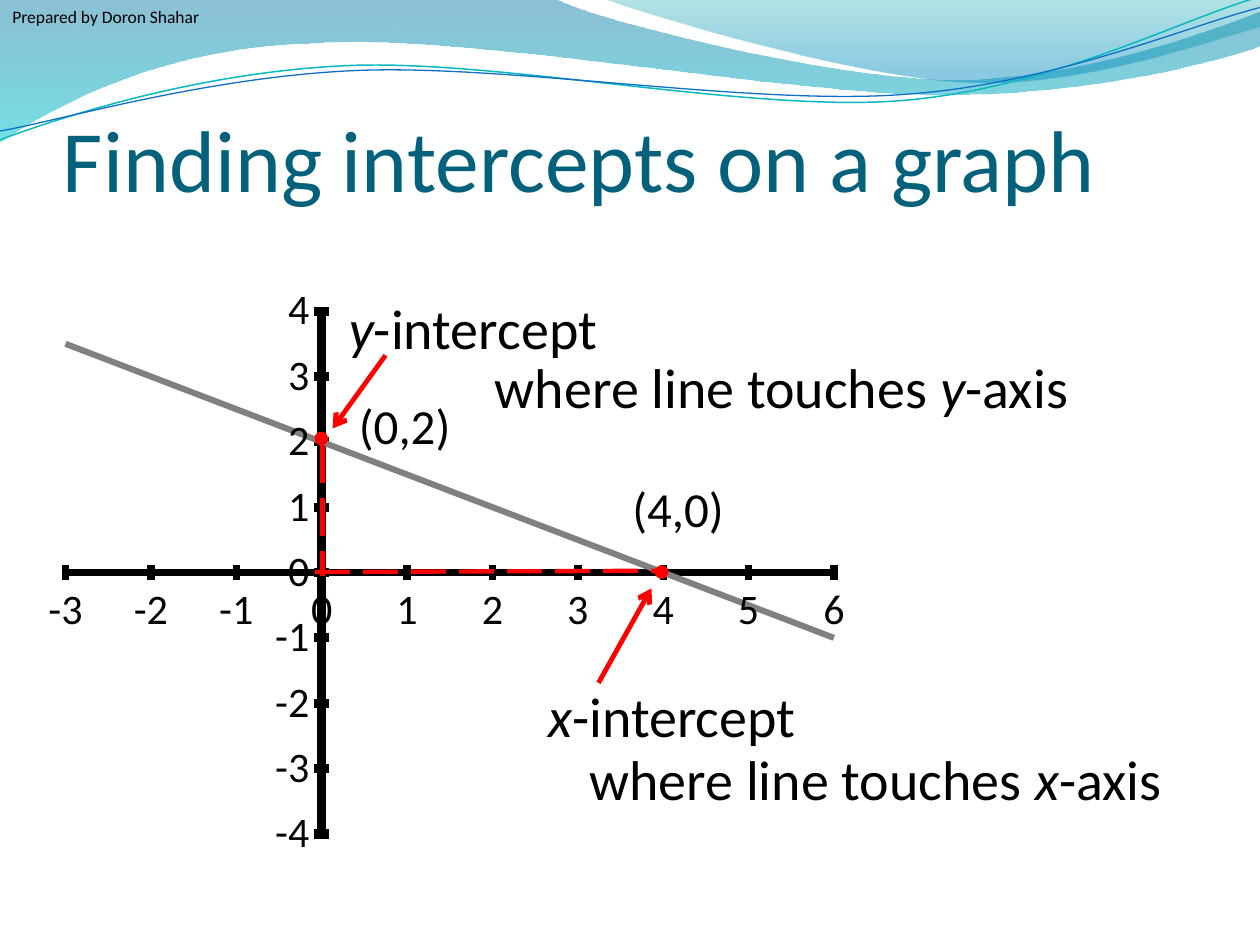
import math

from lxml import etree
from pptx import Presentation
from pptx.chart import data
from pptx.dml import color
from pptx.enum import chart as ec, dml, shapes, text
from pptx.oxml import ns, parse_xml
from pptx.util import Inches, Pt

FONT = "Calibri"
RED = "FF0000"
BLACK = "000000"


def rgb(code):
    return color.RGBColor.from_string(code)


def sub(node, tag, **attrs):
    return etree.SubElement(node, ns.qn(tag), attrs)


def pen(line, code, width):
    line.color.rgb = rgb(code)
    line.width = Pt(width)


# Waves: each segment is a cubic curve (three points) or a line (one point)
def outline(group, start, segs, close):
    form = group.build_freeform(*map(Inches, start))
    form.add_line_segments(
        [tuple(map(Inches, pt)) for seg in segs for pt in seg], close=close)
    shape = form.convert_to_shape()
    shape.shadow.inherit = False
    steps = iter(shape._element.findall(".//" + ns.qn("a:lnTo")))
    for seg in segs:
        nodes = [next(steps) for pt in seg]
        if len(nodes) == 3:
            cubic = etree.Element(ns.qn("a:cubicBezTo"))
            nodes[0].addprevious(cubic)
            for node in nodes:
                cubic.append(node[0])
                node.getparent().remove(node)
    return shape


def band(group, start, segs, stops):
    shape = outline(group, start, segs, True)
    shape.line.fill.background()
    shape.fill.gradient()
    shape.fill.gradient_angle = 270
    for stop, (pos, code, alpha) in zip(shape.fill.gradient_stops, stops):
        stop.position = pos
        stop.color.rgb = rgb(code)
    clrs = shape._element.spPr.findall(".//" + ns.qn("a:srgbClr"))
    for clr, (pos, code, alpha) in zip(clrs, stops):
        sub(clr, "a:alpha", val=str(alpha * 1000))


def curve(group, mid, start, segs, code, width, tilt=-2.7):
    cos, sin = math.cos(math.radians(tilt)), math.sin(math.radians(tilt))

    def level(pt):
        dx, dy = pt[0] - mid[0], pt[1] - mid[1]
        return mid[0] + dx * cos + dy * sin, mid[1] - dx * sin + dy * cos

    shape = outline(group, level(start),
                    [[level(pt) for pt in seg] for seg in segs], False)
    shape.rotation = tilt
    shape.fill.background()
    pen(shape.line, code, width)


def waves(slide):
    band(slide.shapes, (0, 0), [
        [(4.4, -0.01)],
        [(4.76, 0.17), (6.64, 0.63), (7.58, 0.63)],
        [(8.53, 0.63), (9.58, 0.26), (10, 0.09)],
        [(10.01, 0.36)],
        [(9.83, 0.44), (8.7, 0.76), (7.46, 0.75)],
        [(6.22, 0.75), (3.82, 0.28), (2.57, 0.34)],
        [(1.29, 0.36), (0.46, 0.83), (-0.01, 1.13)],
    ], [(0, "0074A1", 45), (1, "00C6CF", 55)])
    band(slide.shapes, (4.79, -0.01), [
        [(5.09, 0.11), (6.82, 0.62), (7.69, 0.65)],
        [(8.56, 0.69), (9.61, 0.32), (10, 0.21)],
        [(10, 0)],
    ], [(0, "00A1A9", 30), (0.8, "008BBF", 45)])
    pair = slide.shapes.add_group_shape().shapes
    curve(pair, (4.99, 0.58), (0, 1.11), [
        [(0.48, 0.93), (1.58, 0.57), (2.77, 0.52)],
        [(3.95, 0.47), (5.93, 0.89), (7.13, 0.8)],
        [(8.33, 0.71), (9.38, 0.15), (9.98, -0.02)],
    ], "0AB8BF", 0.85)
    curve(pair, (5, 0.59), (0, 1.04), [
        [(0.47, 0.96), (1.64, 0.61), (2.83, 0.56)],
        [(4.03, 0.51), (5.97, 0.84), (7.17, 0.75)],
        [(8.36, 0.67), (9.41, 0.21), (10, 0.06)],
    ], "0F6FC6", 0.75)


# Text: parts between asterisks are italic
def label(slide, box, words, size, code=BLACK):
    frame = slide.shapes.add_textbox(*map(Inches, box)).text_frame
    frame.word_wrap = True
    frame.auto_size = text.MSO_AUTO_SIZE.SHAPE_TO_FIT_TEXT
    para = frame.paragraphs[0]
    para.font.name = FONT
    para.font.size = Pt(size)
    para.font.color.rgb = rgb(code)
    for i, part in enumerate(words.split("*")):
        if part:
            run = para.add_run()
            run.text = part
            if i % 2:
                run.font.italic = True
    return frame


def title(slide, box, words):
    frame = label(slide, box, words, 50, "04617B")
    frame.auto_size = text.MSO_AUTO_SIZE.NONE
    frame.margin_left = frame.margin_right = frame.margin_bottom = 0
    frame.vertical_anchor = text.MSO_ANCHOR.BOTTOM


# Line graph: three points and a trend line drawn across the whole axis
def axis(ax, low, high, width):
    ax.minimum_scale, ax.maximum_scale, ax.major_unit = low, high, 1
    ax.has_major_gridlines = False
    ax.major_tick_mark = ec.XL_TICK_MARK.CROSS
    ax.tick_labels.font.size = Pt(24)
    ax.tick_labels.font.name = FONT
    ax.tick_labels.number_format = "General"
    ax.tick_labels.number_format_is_linked = False
    pen(ax.format.line, BLACK, width)


def graph(slide, box, inner):
    points = data.XyChartData()
    row = points.add_series("Series 1")
    for x, y in zip((0, 1, 2), (2, 1.5, 1)):
        row.add_data_point(x, y)
    chart = slide.shapes.add_chart(
        ec.XL_CHART_TYPE.XY_SCATTER, *map(Inches, box), points).chart
    chart.has_legend = chart.has_title = False
    chart.font.name, chart.font.size = "Cambria", Pt(10)
    chart.font.color.rgb = rgb(BLACK)
    axis(chart.category_axis, -3, 6, 4.25)
    axis(chart.value_axis, -4, 4, 5.25)
    plot = chart.plots[0]
    plot.vary_by_categories = False
    ser = plot.series[0]
    ser.smooth = False
    ser.format.fill.solid()
    ser.format.fill.fore_color.rgb = rgb("0F6FC6")
    ser.format.line.fill.background()
    ser.marker.style = ec.XL_MARKER_STYLE.DIAMOND
    ser.marker.size = 2
    ser.marker.format.fill.background()
    ser.marker.format.line.fill.background()
    trend = parse_xml(
        f'<c:trendline {ns.nsdecls("c", "a")}><c:spPr><a:ln w="{Pt(3.5)}">'
        '<a:solidFill><a:srgbClr val="808080"/></a:solidFill></a:ln></c:spPr>'
        '<c:trendlineType val="linear"/><c:forward val="4"/><c:backward val="3"/>'
        '<c:dispRSqr val="0"/><c:dispEq val="0"/></c:trendline>')
    ser._element.find(ns.qn("c:xVal")).addprevious(trend)
    # Plot area at the inner box, as shares of the chart box
    area = chart._chartSpace.find(".//" + ns.qn("c:plotArea"))
    for old in area.findall(ns.qn("c:layout")):
        area.remove(old)
    layout = parse_xml(f'<c:layout {ns.nsdecls("c")}/>')
    area.insert(0, layout)
    man = sub(layout, "c:manualLayout")
    for tag, val in (("layoutTarget", "inner"), ("xMode", "edge"), ("yMode", "edge"),
                     ("x", (inner[0] - box[0]) / box[2]),
                     ("y", (inner[1] - box[1]) / box[3]),
                     ("w", inner[2] / box[2]), ("h", inner[3] / box[3])):
        sub(man, "c:" + tag, val=str(val))


# Marks on the graph
def stroke(slide, start, end, width=2.75, dash=None, arrow=False):
    line = slide.shapes.add_connector(
        shapes.MSO_CONNECTOR.STRAIGHT, *map(Inches, start + end))
    pen(line.line, RED, width)
    if dash:
        line.line.dash_style = dash
    if arrow:
        sub(line.line._get_or_add_ln(), "a:tailEnd", type="arrow")
    sub(line._element.spPr, "a:effectLst")


def dot(slide, x, y, size=0.08):
    shape = slide.shapes.add_shape(
        shapes.MSO_SHAPE.OVAL, *map(Inches, (x, y, size, size)))
    shape.shadow.inherit = False
    shape.fill.solid()
    shape.fill.fore_color.rgb = rgb(RED)
    pen(shape.line, RED, 2)


def marks(slide):
    dash = dml.MSO_LINE.LONG_DASH
    stroke(slide, (2.56, 3.53), (2.56, 4.57), dash=dash)
    stroke(slide, (2.5, 4.54), (5.22, 4.53), 2.5, dash)
    label(slide, (2.75, 3.09, 1.17, 0.57), "(0,2)", 28)
    label(slide, (4.92, 3.75, 1.17, 0.57), "(4,0)", 28)
    dot(slide, 5.21, 4.5)
    dot(slide, 2.51, 3.44)
    for box, words in (((4.25, 5.36, 2.5, 0.64), "*x*-intercept"),
                       ((2.67, 2.28, 2.25, 0.64), "*y*-intercept"),
                       ((3.83, 2.75, 4.75, 0.64), "where line touches *y*-axis"),
                       ((4.58, 5.86, 4.75, 0.64), "where line touches *x*-axis")):
        label(slide, box, words, 32)
    stroke(slide, (4.75, 5.42), (5.17, 4.67), arrow=True)
    stroke(slide, (3.06, 2.82), (2.64, 3.4), arrow=True)


def main():
    deck = Presentation()
    deck.slide_width, deck.slide_height = Inches(10), Inches(7.5)
    slide = deck.slides.add_slide(deck.slide_layouts[6])
    waves(slide)
    title(slide, (0.5, 0.42, 9, 1.25), "Finding intercepts on a graph")
    graph(slide, (0.25, 2.17, 6.58, 4.75), (0.52, 2.47, 6.1, 4.15))
    marks(slide)
    label(slide, (0, 0, 2, 0.27), "Prepared by Doron Shahar", 10)
    deck.save("out.pptx")


if __name__ == "__main__":
    main()
